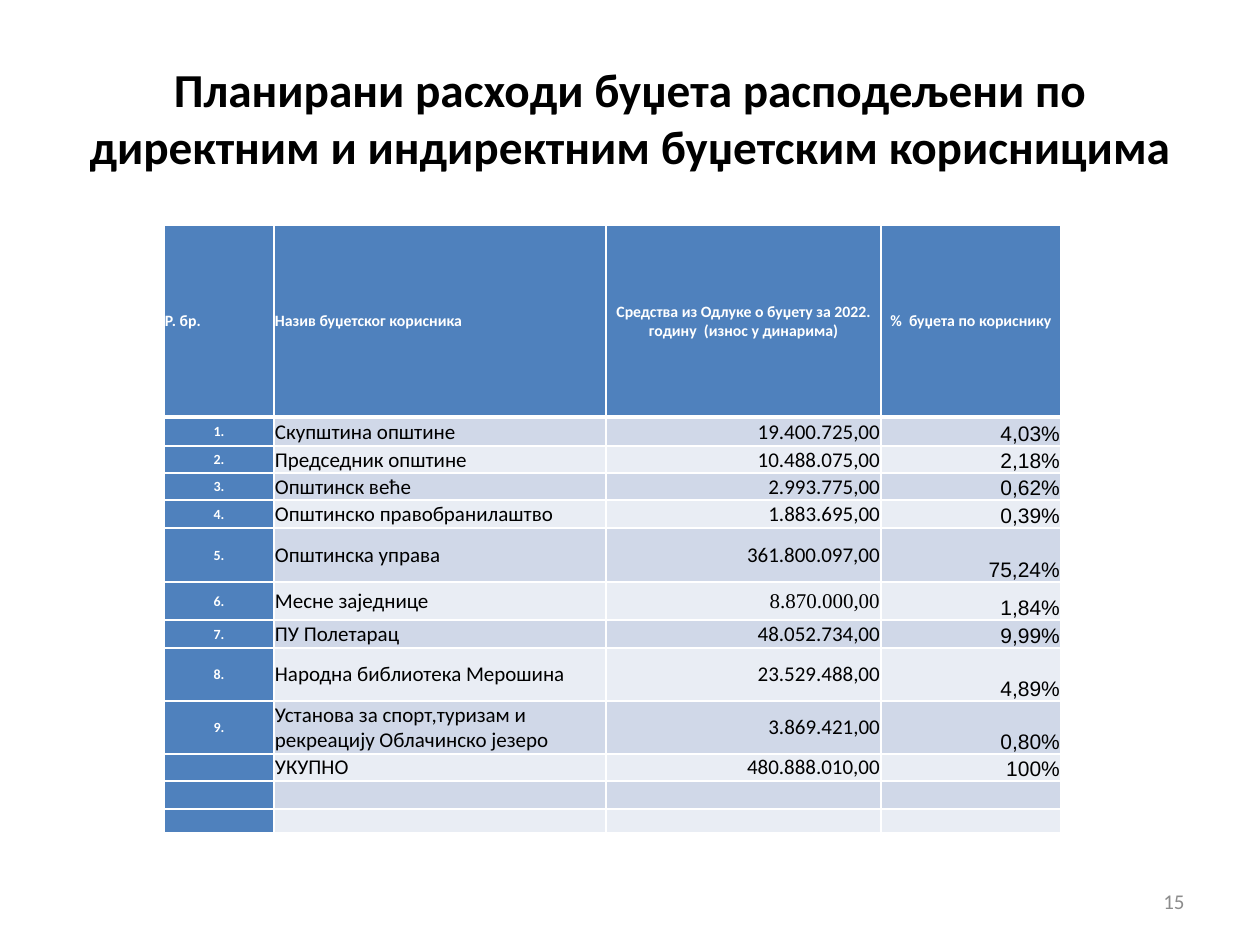
"""Builds the slide with planned budget expenses by budget user."""
from lxml import etree
from pptx import Presentation, util as u
from pptx.dml.color import RGBColor
from pptx.enum import text
from pptx.oxml import ns

PX = u.Inches(1) // 126
LEFT, CENTER, RIGHT = text.PP_ALIGN.LEFT, text.PP_ALIGN.CENTER, text.PP_ALIGN.RIGHT
MIDDLE, BOTTOM = text.MSO_ANCHOR.MIDDLE, text.MSO_ANCHOR.BOTTOM
BLUE, BANDS = "4F81BD", ("D0D8E8", "E9EDF4")


def rgb(value):
    return RGBColor.from_string(value)


def write(tf, words, size=12, font="Calibri", color="000000", bold=False, align=LEFT):
    p = tf.paragraphs[0]
    p.alignment = align
    p.font.size = u.Pt(size)
    if words:
        r = p.add_run()
        r.text = words
        r.font.size, r.font.name, r.font.bold = u.Pt(size), font, bold
        r.font.color.rgb = rgb(color)


header = ("Р. бр.", "Назив буџетског корисника",
          "Средства из Одлуке о буџету за 2022. годину  (износ у динарима)",
          "%  буџета по кориснику")
users = [
    ("Скупштина општине", "19.400.725,00", "4,03%"),
    ("Председник општине", "10.488.075,00", "2,18%"),
    ("Општинск веће", "2.993.775,00", "0,62%"),
    ("Општинско правобранилаштво", "1.883.695,00", "0,39%"),
    ("Општинска управа", "361.800.097,00", "75,24%"),
    ("Месне заједнице", "8.870.000,00", "1,84%"),
    ("ПУ Полетарац", "48.052.734,00", "9,99%"),
    ("Народна библиотека Мерошина", "23.529.488,00", "4,89%"),
    ("Установа за спорт,туризам и рекреацију Облачинско језеро", "3.869.421,00", "0,80%"),
]
rows = [header]
rows += [(f"{n}.", *user) for n, user in enumerate(users, 1)]
rows += [("", "УКУПНО", "480.888.010,00", "100%"), ("",) * 4, ("",) * 4]
widths = (110, 332, 275, 180)
heights = (192, 29, 27, 27, 28, 54, 38, 28, 53, 53, 27, 28, 24)

prs = Presentation()
prs.slide_width, prs.slide_height = 1260 * PX, 945 * PX
s = prs.slides.add_slide(prs.slide_layouts[6])

title = "Планирани расходи буџета расподељени по директним и индиректним буџетским корисницима"
for words, box, style in (
    (title, (63, 38, 1134, 158), dict(size=27, bold=True, align=CENTER)),
    ("15", (903, 876, 294, 50), dict(color="8C8C8C", align=RIGHT)),
):
    tf = s.shapes.add_textbox(*(v * PX for v in box)).text_frame
    tf.word_wrap = True
    tf.vertical_anchor = MIDDLE
    write(tf, words, **style)

table = s.shapes.add_table(len(rows), len(widths), 164 * PX, 225 * PX,
                           sum(widths) * PX, sum(heights) * PX).table
for column, width in zip(table.columns, widths):
    column.width = width * PX
for row, height in zip(table.rows, heights):
    row.height = height * PX

for i, row in enumerate(rows):
    for j, words in enumerate(row):
        cell = table.cell(i, j)
        cell.margin_left = cell.margin_right = cell.margin_top = PX
        cell.margin_bottom = 0
        cell.vertical_anchor = BOTTOM if i and j == 3 else MIDDLE
        for side in "LRTB":
            thick = (i, side) in ((0, "B"), (1, "T"))
            ln = etree.SubElement(cell._tc.get_or_add_tcPr(), ns.qn(f"a:ln{side}"),
                                  w=str(u.Pt(3 if thick else 1)))
            fill = etree.SubElement(ln, ns.qn("a:solidFill"))
            etree.SubElement(fill, ns.qn("a:srgbClr"), val="FFFFFF")
        cell.fill.solid()
        cell.fill.fore_color.rgb = rgb(BLUE if i == 0 or j == 0 else BANDS[(i - 1) % 2])
        if i == 0:
            style = dict(size=9, color="FFFFFF", bold=True, align=LEFT if j < 2 else CENTER)
        elif j == 0:
            style = dict(size=8, color="FFFFFF", bold=True, align=CENTER)
        else:
            style = dict(size=12 if words else 8, align=LEFT if j == 1 else RIGHT)
            if j == 3:
                style["font"] = "Arial"
            elif words == "8.870.000,00":
                style["font"] = "Times New Roman"
        write(cell.text_frame, words, **style)

prs.save("out.pptx")
